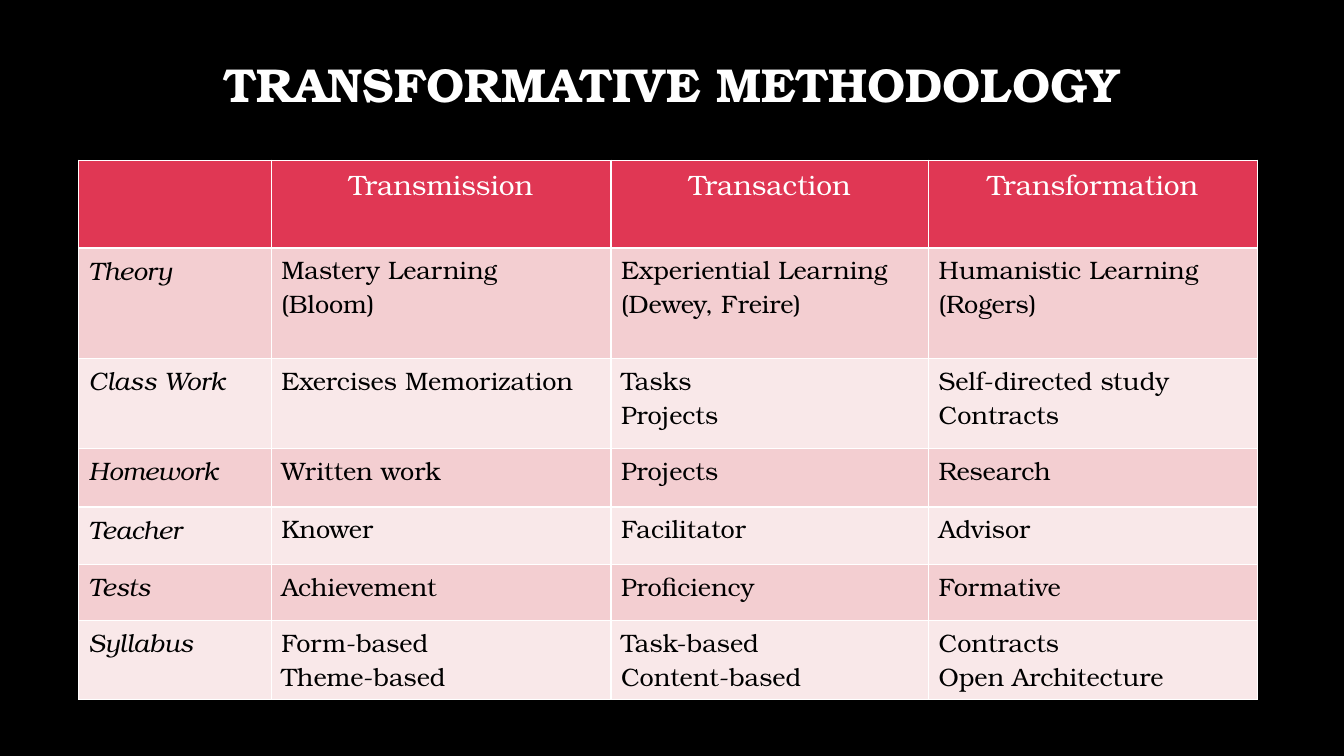
from lxml.etree import SubElement
from pptx import Presentation
from pptx.dml.color import RGBColor
from pptx.enum.text import MSO_ANCHOR, PP_ALIGN
from pptx.oxml.ns import qn
from pptx.util import Inches, Pt

TITLE = "TRANSFORMATIVE METHODOLOGY"
ROWS = [
    ("", "Transmission", "Transaction", "Transformation"),
    ("Theory", "Mastery Learning\n(Bloom)", "Experiential Learning\n(Dewey, Freire)",
     "Humanistic Learning\n(Rogers)"),
    ("Class Work", "Exercises Memorization", "Tasks\nProjects", "Self-directed study\nContracts"),
    ("Homework", "Written work", "Projects", "Research"),
    ("Teacher", "Knower", "Facilitator", "Advisor"),
    ("Tests", "Achievement", "Proficiency", "Formative"),
    ("Syllabus", "Form-based\nTheme-based", "Task-based\nContent-based",
     "Contracts\nOpen Architecture"),
]
COLUMN_WIDTHS = [1.91, 3.37, 3.15, 3.26]
ROW_HEIGHTS = [0.87, 1.1, 0.89, 0.58, 0.57, 0.56, 0.78]
FONT = "TeX Gyre Bonum"
COLORS = {"black": "000000", "white": "FFFFFF", "header": "E03754",
          "odd": "F3CED1", "even": "F9E8E9"}


def color(name):
    return RGBColor.from_string(COLORS[name])


def style_paragraph(paragraph, size, color_name, alignment):
    paragraph.alignment = alignment
    paragraph.font.name = FONT
    paragraph.font.size = Pt(size)
    paragraph.font.color.rgb = color(color_name)


def add_borders(cell):
    properties = cell._tc.get_or_add_tcPr()
    for index, side in enumerate(("lnL", "lnR", "lnT", "lnB")):
        line = properties.makeelement(qn(f"a:{side}"), {"w": str(Pt(1))})
        fill = SubElement(line, qn("a:solidFill"))
        SubElement(fill, qn("a:srgbClr"), val=COLORS["white"])
        properties.insert(index, line)


def add_title(slide):
    title = slide.shapes.title
    title.left, title.top = Inches(1), Inches(0.14)
    title.width, title.height = Inches(11.32), Inches(1.45)
    title.text_frame.text = TITLE
    title.text_frame.vertical_anchor = MSO_ANCHOR.MIDDLE
    paragraph = title.text_frame.paragraphs[0]
    style_paragraph(paragraph, 34, "white", PP_ALIGN.CENTER)
    paragraph.font.bold = True
    paragraph.line_spacing = 0.9


def fill_cell(cell, text, row, column):
    is_header = row == 0
    cell.text = text
    cell.fill.solid()
    cell.fill.fore_color.rgb = color("header" if is_header else "odd" if row % 2 else "even")
    add_borders(cell)
    for paragraph in cell.text_frame.paragraphs:
        if is_header:
            style_paragraph(paragraph, 20, "white", PP_ALIGN.CENTER)
        else:
            style_paragraph(paragraph, 18, "black", PP_ALIGN.LEFT)
        paragraph.font.bold = False
        paragraph.font.italic = column == 0


def add_methods_table(slide):
    table = slide.shapes.add_table(
        len(ROWS), len(COLUMN_WIDTHS), Inches(0.78), Inches(1.59),
        Inches(sum(COLUMN_WIDTHS)), Inches(sum(ROW_HEIGHTS))).table
    for table_column, width in zip(table.columns, COLUMN_WIDTHS):
        table_column.width = Inches(width)
    for row, (texts, height) in enumerate(zip(ROWS, ROW_HEIGHTS)):
        table.rows[row].height = Inches(height)
        for column, text in enumerate(texts):
            fill_cell(table.cell(row, column), text, row, column)


def main():
    presentation = Presentation()
    presentation.slide_width, presentation.slide_height = Inches(13.33), Inches(7.5)
    slide = presentation.slides.add_slide(presentation.slide_layouts[5])
    slide.background.fill.solid()
    slide.background.fill.fore_color.rgb = color("black")
    add_title(slide)
    add_methods_table(slide)
    presentation.save("out.pptx")


if __name__ == "__main__":
    main()
